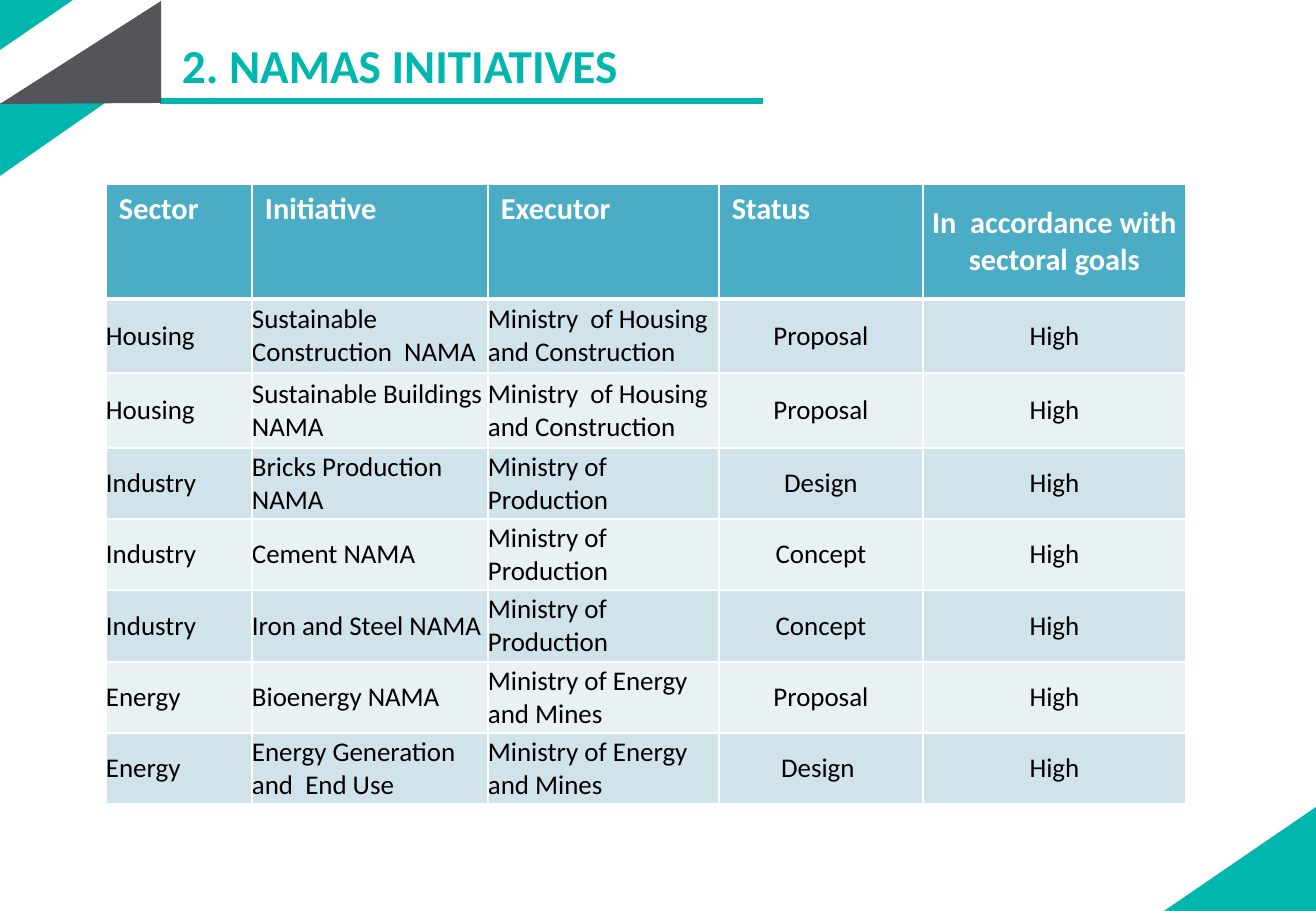
"""Build the NAMAs initiatives slide: corner triangles, underlined title and table."""
import math

import pptx
import pptx.dml.color
import pptx.enum.shapes
import pptx.enum.text
import pptx.oxml
import pptx.oxml.ns
import pptx.util

PX = 7526
FONT = "Calibri"
TEAL = pptx.dml.color.RGBColor(0x00, 0xB7, 0xAF)
GREY = pptx.dml.color.RGBColor(0x56, 0x54, 0x5B)
HEADER_BLUE = pptx.dml.color.RGBColor(0x4B, 0xAC, 0xC6)
BAND_DARK = pptx.dml.color.RGBColor(0xD0, 0xE3, 0xEA)
BAND_LIGHT = pptx.dml.color.RGBColor(0xE9, 0xF1, 0xF5)
WHITE = pptx.dml.color.RGBColor(0xFF, 0xFF, 0xFF)
BLACK = pptx.dml.color.RGBColor(0x00, 0x00, 0x00)

TRIANGLES = [
    (TEAL, 310.3, [(0, 50), (0, 0), (73, 0)]),
    (TEAL, 310.3, [(0, 176), (0, 103), (105, 103)]),
    (TEAL, 130.6, [(1316, 807), (1316, 911), (1164, 911)]),
    (GREY, 130.6, [(161, 1), (161, 103), (0, 104)]),
]
COLUMN_WIDTHS = [146, 236, 231, 204, 263]
ROW_HEIGHTS = [115, 74, 75, 71, 71, 72, 71, 71]
ROWS = [
    ("Sector", "Initiative", "Executor", "Status", "In  accordance with sectoral goals"),
    ("Housing", "Sustainable  Construction  NAMA", "Ministry  of Housing and Construction", "Proposal", "High"),
    ("Housing", "Sustainable Buildings NAMA", "Ministry  of Housing and Construction", "Proposal", "High"),
    ("Industry", "Bricks Production NAMA", "Ministry of Production", "Design", "High"),
    ("Industry", "Cement NAMA", "Ministry of Production", "Concept", "High"),
    ("Industry", "Iron and Steel NAMA", "Ministry of Production", "Concept", "High"),
    ("Energy", "Bioenergy NAMA", "Ministry of Energy and Mines", "Proposal", "High"),
    ("Energy", "Energy Generation and  End Use", "Ministry of Energy and Mines", "Design ", "High"),
]


def format_text(paragraph, size, color, bold):
    for run in paragraph.runs:
        run.font.name = FONT
        run.font.size = pptx.util.Pt(size)
        run.font.bold = bold
        run.font.color.rgb = color


def add_border(cell, side, points):
    cell._tc.get_or_add_tcPr().append(pptx.oxml.parse_xml(
        f'<a:{side} {pptx.oxml.ns.nsdecls("a")} w="{pptx.util.Pt(points)}">'
        f'<a:solidFill><a:srgbClr val="{WHITE}"/></a:solidFill></a:{side}>'))


presentation = pptx.Presentation()
presentation.slide_width = 1316 * PX
presentation.slide_height = 911 * PX
slide = presentation.slides.add_slide(presentation.slide_layouts[6])

bar = slide.shapes.add_shape(
    pptx.enum.shapes.MSO_SHAPE.RECTANGLE, 160 * PX, 98 * PX, 603 * PX, 6 * PX)
decorations = [(bar, TEAL)]
for color, angle, corners in TRIANGLES:
    cosine, sine = math.cos(math.radians(angle)), math.sin(math.radians(angle))
    turned = [(x * cosine + y * sine, y * cosine - x * sine) for x, y in corners]
    middle_x, middle_y = [(min(values) + max(values)) / 2 for values in zip(*turned)]
    shift_x = middle_x * cosine - middle_y * sine - middle_x
    shift_y = middle_x * sine + middle_y * cosine - middle_y
    points = [((x + shift_x) * PX, (y + shift_y) * PX) for x, y in turned]
    builder = slide.shapes.build_freeform(*points[0])
    builder.add_line_segments(points[1:], close=True)
    triangle = builder.convert_to_shape()
    triangle.rotation = angle
    decorations.append((triangle, color))
for shape, color in decorations:
    shape.shadow.inherit = False
    shape.fill.solid()
    shape.fill.fore_color.rgb = color
    shape.line.fill.background()

title = slide.shapes.add_textbox(170 * PX, 30 * PX, 465 * PX, 69 * PX)
title.text_frame.word_wrap = False
title.text_frame.text = "2. NAMAS INITIATIVES"
format_text(title.text_frame.paragraphs[0], 28, TEAL, True)

table = slide.shapes.add_table(
    len(ROWS), len(COLUMN_WIDTHS), 106 * PX, 184 * PX,
    sum(COLUMN_WIDTHS) * PX, sum(ROW_HEIGHTS) * PX).table
for column, width in zip(table.columns, COLUMN_WIDTHS):
    column.width = width * PX
for row, height in zip(table.rows, ROW_HEIGHTS):
    row.height = height * PX

for row_index, texts in enumerate(ROWS):
    is_header = row_index == 0
    for column_index, text in enumerate(texts):
        cell = table.cell(row_index, column_index)
        is_padded = is_header and column_index < 4
        cell.margin_left = cell.margin_right = 13 * PX if is_padded else 0
        cell.margin_top = cell.margin_bottom = 7 * PX if is_padded else 0
        cell.vertical_anchor = (pptx.enum.text.MSO_ANCHOR.TOP if is_padded
                                else pptx.enum.text.MSO_ANCHOR.MIDDLE)
        add_border(cell, "lnL", 1)
        add_border(cell, "lnR", 1)
        add_border(cell, "lnT", 3 if row_index == 1 else 1)
        add_border(cell, "lnB", 3 if is_header else 1)
        cell.fill.solid()
        cell.fill.fore_color.rgb = (HEADER_BLUE if is_header
                                    else BAND_DARK if row_index % 2 else BAND_LIGHT)
        cell.text_frame.text = text
        paragraph = cell.text_frame.paragraphs[0]
        if column_index >= 3 and not is_padded:
            paragraph.alignment = pptx.enum.text.PP_ALIGN.CENTER
        format_text(paragraph, 18 if is_header else 16, WHITE if is_header else BLACK, is_header)

presentation.save("out.pptx")
